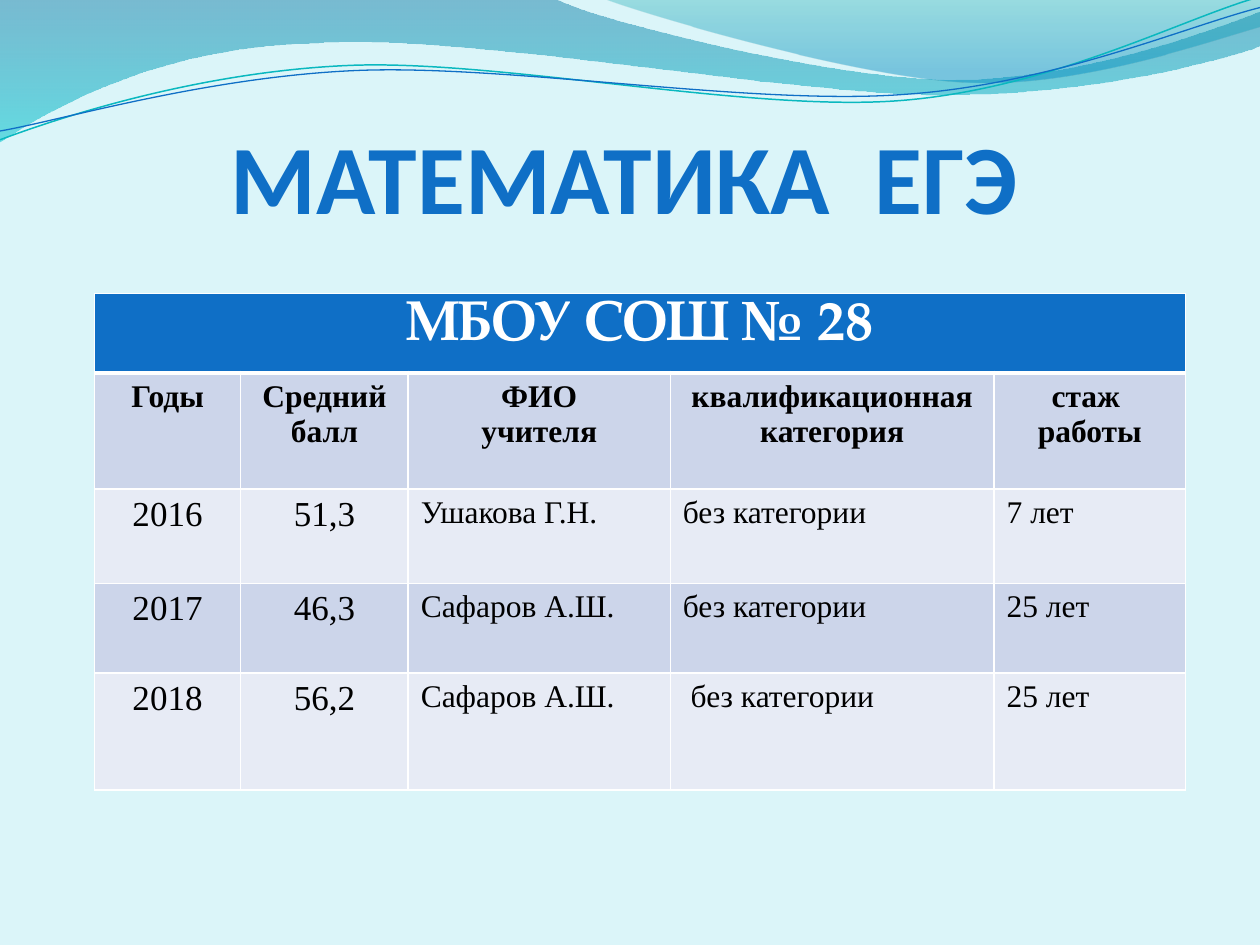
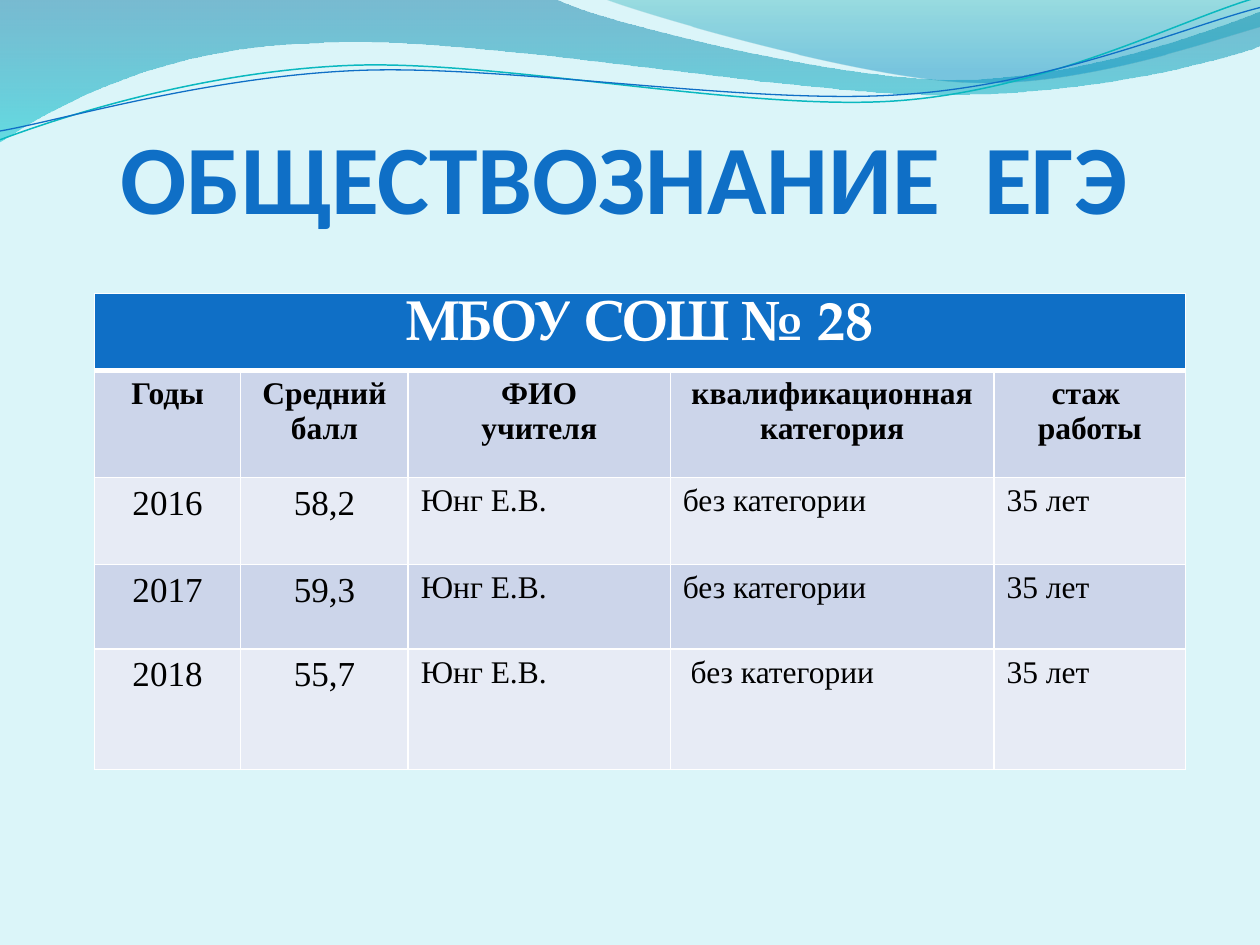
"""Build two slides of exam results, one table of scores for each subject."""
from dataclasses import dataclass

from lxml import etree
from pptx import Presentation
from pptx.dml.color import RGBColor
from pptx.enum.text import MSO_ANCHOR, MSO_AUTO_SIZE, PP_ALIGN
from pptx.oxml.ns import qn
from pptx.util import Pt

EMU_PER_PX = 9144
SLIDE_WIDTH, SLIDE_HEIGHT = 1000, 750
TITLE_ONLY = 5
CENTER, LEFT = PP_ALIGN.CENTER, PP_ALIGN.LEFT
BOTTOM = MSO_ANCHOR.BOTTOM
NO_AUTOFIT = MSO_AUTO_SIZE.NONE

COLORS = {
    "background": "DBF5F9",
    "blue": "0F6FC6",
    "teal": "0AB8BF",
    "white": "FFFFFF",
    "black": "000000",
    "dark_row": "CCD5EA",
    "light_row": "E7EBF5",
    "band_top": "0074A1",
    "band_bottom": "00C6CF",
    "crest_top": "00A1A9",
    "crest_bottom": "008BBF",
}
TITLE_FONT, SCHOOL_FONT, BODY_FONT = "Calibri", "TeX Gyre Pagella", "Times New Roman"

TITLE_BOX = (75, 115, 841, 71)
TABLE_LEFT, TABLE_TOP = 75, 233
COLUMN_WIDTHS = (116, 133, 208, 257, 152)
SCHOOL = "МБОУ СОШ № 28"
HEADINGS = ("Годы", "Средний балл", "ФИО\nучителя", "квалификационная категория", "стаж \nработы")


@dataclass(frozen=True)
class GradientStop:
    """One colour of a gradient, with position and opacity in percent."""
    position: int
    color: str
    opacity: int


@dataclass(frozen=True)
class Wave:
    """A chain of segments: two numbers are a line, six a Bezier curve."""
    start: tuple[int, int]
    segments: tuple[tuple[int, ...], ...]
    stops: tuple[GradientStop, ...] = ()
    line_color: str = ""
    line_width: float = 0


@dataclass(frozen=True)
class YearResult:
    """The score of one year and the teacher behind it."""
    year: str
    score: str
    teacher: str
    category: str
    experience: str


@dataclass(frozen=True)
class Subject:
    """The content of one slide."""
    title: str
    row_heights: tuple[int, ...]
    results: tuple[YearResult, ...]


@dataclass(frozen=True)
class TextStyle:
    """The look of the text in a table cell."""
    font: str
    size: int
    color: str
    bold: bool
    align: PP_ALIGN


SCHOOL_STYLE = TextStyle(SCHOOL_FONT, 32, "white", True, CENTER)
HEADING_STYLE = TextStyle(BODY_FONT, 18, "black", True, CENTER)
NUMBER_STYLE = TextStyle(BODY_FONT, 20, "black", False, CENTER)
DETAIL_STYLE = TextStyle(BODY_FONT, 18, "black", False, LEFT)
RESULT_STYLES = (NUMBER_STYLE,) * 2 + (DETAIL_STYLE,) * 3

WAVES = (
    Wave((0, 0), (
        (440, -1), (476, 17, 664, 63, 758, 63), (853, 63, 958, 26, 1000, 9), (1001, 36),
        (983, 44, 870, 76, 746, 75), (622, 75, 382, 28, 257, 34), (129, 36, 46, 83, -1, 113),
    ), stops=(GradientStop(0, "band_top", 45), GradientStop(100, "band_bottom", 55))),
    Wave((479, -1), (
        (509, 11, 682, 62, 769, 65), (856, 69, 961, 32, 1000, 21), (1000, 0),
    ), stops=(GradientStop(0, "crest_top", 30), GradientStop(80, "crest_bottom", 45))),
    Wave((0, 111), (
        (48, 93, 158, 57, 277, 52), (395, 47, 593, 89, 713, 80), (833, 71, 938, 15, 998, -2),
    ), line_color="teal", line_width=0.85),
    Wave((0, 104), (
        (47, 96, 164, 61, 283, 56), (403, 51, 597, 84, 717, 75), (836, 67, 941, 21, 1000, 6),
    ), line_color="blue", line_width=0.75),
)

SUBJECTS = (
    Subject("МАТЕМАТИКА  ЕГЭ", (63, 92, 75, 71, 93), (
        YearResult("2016", "51,3", "Ушакова Г.Н.", "без категории", "7 лет"),
        YearResult("2017", "46,3", "Сафаров А.Ш.", "без категории", "25 лет"),
        YearResult("2018", "56,2", "Сафаров А.Ш.", " без категории", "25 лет"),
    )),
    Subject("ОБЩЕСТВОЗНАНИЕ  ЕГЭ", (61, 85, 69, 67, 96), (
        YearResult("2016", "58,2", "Юнг Е.В.", "без категории", "35 лет"),
        YearResult("2017", "59,3", "Юнг Е.В.", "без категории", "35 лет"),
        YearResult("2018", "55,7", "Юнг Е.В.", " без категории", "35 лет"),
    )),
)


def px(length: int) -> int:
    """Turn px into EMU."""
    return length * EMU_PER_PX


def rgb(name: str) -> RGBColor:
    """Look up a named colour."""
    return RGBColor.from_string(COLORS[name])


def bend(curve, segments: tuple[tuple[int, ...], ...]) -> None:
    """Join the three straight steps of each six-number segment into a Bezier curve."""
    steps = iter(list(curve.element.iter(qn("a:lnTo"))))
    for segment in segments:
        corners = [next(steps) for _ in range(len(segment) // 2)]
        if len(corners) == 3:
            arc = etree.Element(qn("a:cubicBezTo"))
            corners[0].addprevious(arc)
            for corner in corners:
                arc.append(corner[0])
                corner.getparent().remove(corner)


def draw_wave(slide, wave: Wave):
    """Draw a gradient band or a thin curve and return it."""
    points = [(x, y) for s in wave.segments for x, y in zip(s[::2], s[1::2])]
    builder = slide.shapes.build_freeform(*wave.start, scale=EMU_PER_PX)
    builder.add_line_segments(points, close=bool(wave.stops))
    curve = builder.convert_to_shape()
    bend(curve, wave.segments)
    curve.shadow.inherit = False
    if not wave.stops:
        curve.fill.background()
        curve.line.color.rgb = rgb(wave.line_color)
        curve.line.width = Pt(wave.line_width)
        return curve
    curve.line.fill.background()
    curve.fill.gradient()
    curve.fill.gradient_angle = 270
    for stop, spec in zip(curve.fill.gradient_stops, wave.stops):
        stop.position = spec.position / 100
        stop.color.rgb = rgb(spec.color)
    for color, spec in zip(curve.element.spPr.iter(qn("a:srgbClr")), wave.stops):
        etree.SubElement(color, qn("a:alpha"), val=str(spec.opacity * 1000))
    return curve


def add_title(slide, text: str) -> None:
    """Place and format the slide title."""
    title = slide.shapes.title
    title.left, title.top, title.width, title.height = map(px, TITLE_BOX)
    frame = title.text_frame
    frame.text = text
    frame.auto_size = NO_AUTOFIT
    frame.vertical_anchor = BOTTOM
    frame.margin_left = frame.margin_top = frame.margin_right = frame.margin_bottom = 0
    paragraph = frame.paragraphs[0]
    paragraph.alignment = CENTER
    paragraph.font.name = TITLE_FONT
    paragraph.font.size = Pt(56)
    paragraph.font.bold = True
    paragraph.font.color.rgb = rgb("blue")


def set_borders(cell, top: int = 1, bottom: int = 1) -> None:
    """Give a cell white borders, with widths in points."""
    properties = cell._tc.get_or_add_tcPr()
    for index, (side, width) in enumerate((("L", 1), ("R", 1), ("T", top), ("B", bottom))):
        border = etree.Element(qn(f"a:ln{side}"), w=str(Pt(width)))
        fill = etree.SubElement(border, qn("a:solidFill"))
        etree.SubElement(fill, qn("a:srgbClr"), val=COLORS["white"])
        properties.insert(index, border)


def fill_cell(cell, text: str, style: TextStyle, fill: str) -> None:
    """Write styled text into a cell and colour it."""
    cell.text = text
    cell.fill.solid()
    cell.fill.fore_color.rgb = rgb(fill)
    for paragraph in cell.text_frame.paragraphs:
        paragraph.alignment = style.align
        paragraph.font.name = style.font
        paragraph.font.size = Pt(style.size)
        paragraph.font.bold = style.bold
        paragraph.font.color.rgb = rgb(style.color)


def add_results(slide, subject: Subject) -> None:
    """Add the table of yearly results."""
    heights = subject.row_heights
    table = slide.shapes.add_table(
        len(heights), len(COLUMN_WIDTHS), px(TABLE_LEFT), px(TABLE_TOP),
        px(sum(COLUMN_WIDTHS)), px(sum(heights))).table
    table.horz_banding = False
    for column, width in zip(table.columns, COLUMN_WIDTHS):
        column.width = px(width)
    for row, height in zip(table.rows, heights):
        row.height = px(height)

    school = table.cell(0, 0)
    school.merge(table.cell(0, len(COLUMN_WIDTHS) - 1))
    fill_cell(school, SCHOOL, SCHOOL_STYLE, "blue")
    for cell in table.rows[0].cells:
        set_borders(cell, bottom=3)

    body = [(HEADINGS, (HEADING_STYLE,) * len(HEADINGS))]
    body += [((r.year, r.score, r.teacher, r.category, r.experience), RESULT_STYLES)
             for r in subject.results]
    for number, (texts, styles) in enumerate(body, start=1):
        fill = "dark_row" if number % 2 else "light_row"
        for cell, text, style in zip(table.rows[number].cells, texts, styles):
            fill_cell(cell, text, style, fill)
            set_borders(cell, top=3 if number == 1 else 1)


def main() -> None:
    """Build the presentation and save it."""
    deck = Presentation()
    deck.slide_width, deck.slide_height = px(SLIDE_WIDTH), px(SLIDE_HEIGHT)
    master = deck.slide_master
    background = master.background.fill
    background.solid()
    background.fore_color.rgb = rgb("background")

    layout = deck.slide_layouts[TITLE_ONLY]
    slides = [deck.slides.add_slide(layout) for _ in SUBJECTS]
    for wave in WAVES:
        master.shapes.element.append(draw_wave(slides[0], wave).element)
    for slide, subject in zip(slides, SUBJECTS):
        add_title(slide, subject.title)
        add_results(slide, subject)
    deck.save("out.pptx")


if __name__ == "__main__":
    main()
